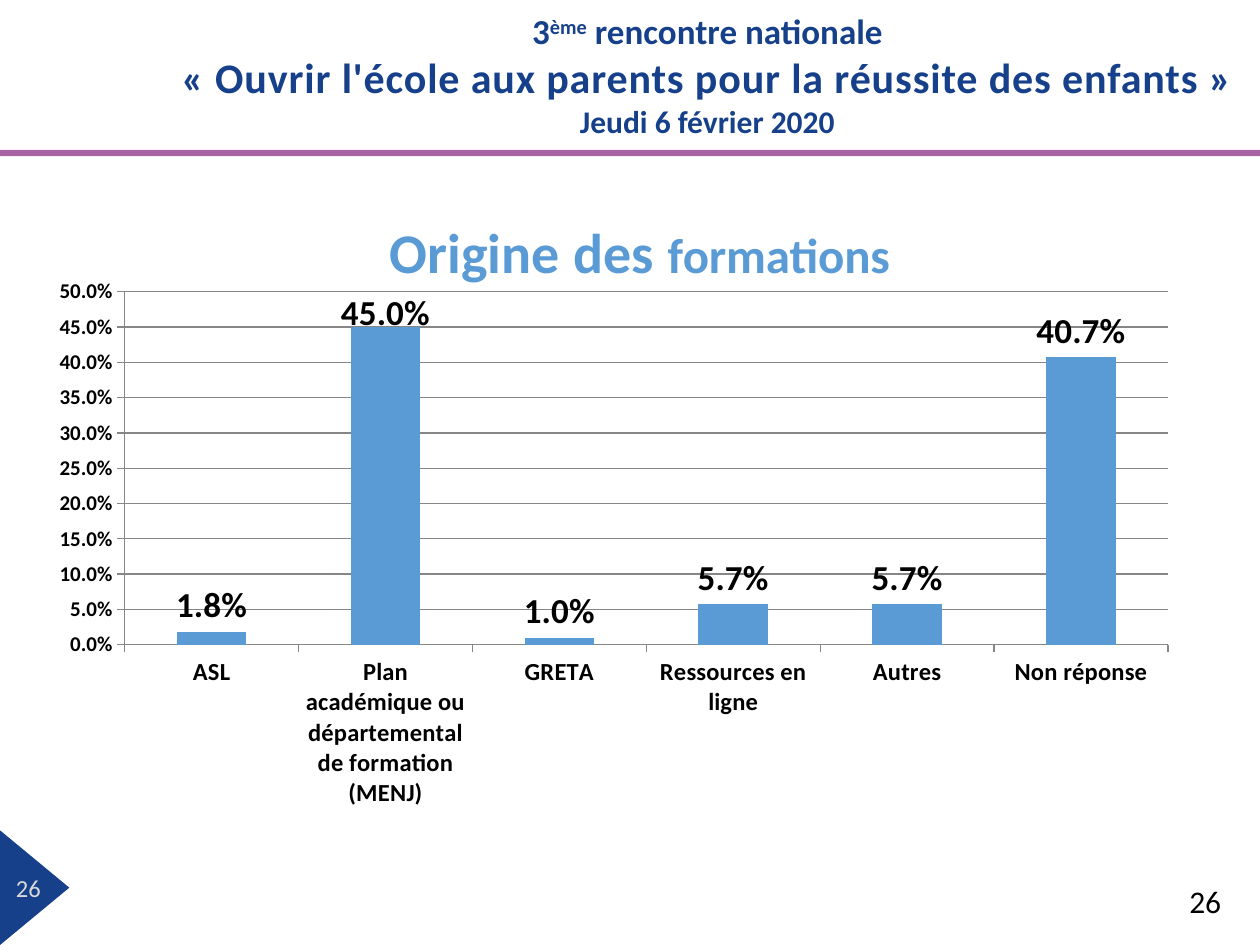
from dataclasses import dataclass

from lxml import etree
from pptx import Presentation
from pptx import util as u
from pptx.chart import data as chart_data
from pptx.dml import color
from pptx.enum import chart as charts
from pptx.enum import shapes, text
from pptx.oxml import ns


@dataclass(frozen=True)
class Theme:
    font: str = "Calibri"
    navy: str = "16408A"
    purple: str = "A863A4"
    blue: str = "5B9BD5"
    black: str = "000000"
    pale: str = "D9D9D9"
    grid: str = "868686"
    title: int = 32
    subtitle: int = 28
    headline: int = 24
    large: int = 20
    medium: int = 18
    small: int = 14
    tick: int = 12


THEME = Theme()
CELL = u.Inches(0.05)
COLUMNS, ROWS = 200, 150
ORIGINS = {
    "ASL": 0.018,
    "Plan académique ou départemental de formation (MENJ)": 0.45,
    "GRETA": 0.01,
    "Ressources en ligne": 0.057,
    "Autres": 0.057,
    "Non réponse": 0.407,
}


def grid_box(*cells):
    return [u.Emu(round(cell * CELL)) for cell in cells]


def apply_format(target, values):
    for name, value in values.items():
        setattr(target, name, value)


def style_font(font, size, hue, bold=False):
    apply_format(font, {"name": THEME.font, "size": u.Pt(size), "bold": bold})
    font.color.rgb = color.RGBColor.from_string(hue)


def paint(shape, hue):
    shape.shadow.inherit = False
    shape.fill.solid()
    shape.fill.fore_color.rgb = color.RGBColor.from_string(hue)
    shape.line.fill.background()


def add_run(paragraph, words, size, hue, bold=False, **properties):
    run = paragraph.add_run()
    run.text = words
    style_font(run.font, size, hue, bold)
    for name, value in properties.items():
        run.font._element.set(name, value)


def add_text_frame(slide, box, **values):
    frame = slide.shapes.add_textbox(*box).text_frame
    apply_format(frame, {"word_wrap": True, **values})
    return frame


def add_header(slide, box):
    frame = add_text_frame(slide, box, vertical_anchor=text.MSO_ANCHOR.MIDDLE)
    lines = [
        [("3", THEME.large, {}), ("ème", THEME.large, {"baseline": "30000"}),
         (" rencontre nationale", THEME.large, {})],
        [("« Ouvrir l'école aux parents pour la réussite des enfants »",
          THEME.headline, {"spc": "50"})],
        [("Jeudi 6 février 2020", THEME.medium, {})],
    ]
    for index, line in enumerate(lines):
        paragraph = frame.add_paragraph() if index else frame.paragraphs[0]
        paragraph.alignment = text.PP_ALIGN.CENTER
        for words, size, properties in line:
            add_run(paragraph, words, size, THEME.navy, True, **properties)


def add_rule(slide, box):
    paint(slide.shapes.add_shape(shapes.MSO_SHAPE.RECTANGLE, *box), THEME.purple)


def add_wedge(slide, box):
    left, top, width, height = box
    builder = slide.shapes.build_freeform(left, top)
    builder.add_line_segments(
        [(left, top + height), (left + width, top + height // 2)], close=True)
    paint(builder.convert_to_shape(), THEME.navy)


def add_wedge_number(slide, box):
    margins = ("margin_left", "margin_top", "margin_right", "margin_bottom")
    frame = add_text_frame(slide, box, vertical_anchor=text.MSO_ANCHOR.MIDDLE,
                           **dict.fromkeys(margins, u.Inches(0.04)))
    frame.paragraphs[0].alignment = text.PP_ALIGN.CENTER
    add_run(frame.paragraphs[0], "26", THEME.small, THEME.pale)


def add_page_number(slide, box):
    frame = add_text_frame(slide, box)
    add_run(frame.paragraphs[0], "26", THEME.medium, THEME.black)


def manual_layout(**values):
    layout = etree.Element(ns.qn("c:layout"))
    manual = etree.SubElement(layout, ns.qn("c:manualLayout"))
    for name, value in values.items():
        etree.SubElement(manual, ns.qn(f"c:{name}")).set("val", str(value))
    return layout


def add_chart_title(chart):
    chart.has_title = True
    title = chart.chart_title
    paragraph = title.text_frame.paragraphs[0]
    add_run(paragraph, "Origine des ", THEME.title, THEME.blue, True)
    add_run(paragraph, "formations", THEME.subtitle, THEME.blue, True)
    title.include_in_layout = False
    element = title._element
    for layout in element.findall(ns.qn("c:layout")):
        element.remove(layout)
    element.find(ns.qn("c:tx")).addnext(
        manual_layout(xMode="edge", yMode="edge", x=0.29, y=0.01))


def style_axes(chart):
    value_axis, category_axis = chart.value_axis, chart.category_axis
    apply_format(value_axis, {"minimum_scale": 0, "maximum_scale": 0.5,
                              "major_unit": 0.05, "has_major_gridlines": True})
    apply_format(value_axis.tick_labels,
                 {"number_format": "0.0%", "number_format_is_linked": False})
    for axis, size in ((value_axis, THEME.tick), (category_axis, THEME.small)):
        axis.major_tick_mark = charts.XL_TICK_MARK.OUTSIDE
        style_font(axis.tick_labels.font, size, THEME.black, True)
    for line in (value_axis.format.line, category_axis.format.line,
                 value_axis.major_gridlines.format.line):
        line.color.rgb = color.RGBColor.from_string(THEME.grid)
        line.width = u.Pt(0.75)


def style_columns(plot):
    apply_format(plot, {"gap_width": 150, "vary_by_categories": False})
    series = plot.series[0]
    series.format.fill.solid()
    series.format.fill.fore_color.rgb = color.RGBColor.from_string(THEME.blue)
    position = charts.XL_LABEL_POSITION.OUTSIDE_END
    labels = series.data_labels
    apply_format(labels, {"show_value": True, "number_format": "0.0%",
                          "number_format_is_linked": False, "position": position})
    style_font(labels.font, THEME.large, THEME.black, True)
    tallest = series.points[1].data_label
    style_font(tallest.font, THEME.large, THEME.black, True)
    tallest.position = position
    label = labels._element.find(ns.qn("c:dLbl"))
    layout = manual_layout(x=0, y=0.02)
    label.find(ns.qn("c:idx")).addnext(layout)
    number_format = etree.Element(ns.qn("c:numFmt"), formatCode="0.0%", sourceLinked="0")
    layout.addnext(number_format)


def add_origins_chart(slide, box):
    data = chart_data.CategoryChartData(number_format="0.0%")
    data.categories = list(ORIGINS)
    data.add_series("Series 1", list(ORIGINS.values()))
    chart = slide.shapes.add_chart(
        charts.XL_CHART_TYPE.COLUMN_CLUSTERED, *box, data).chart
    chart.has_legend = False
    style_font(chart.font, 10, THEME.black)
    add_chart_title(chart)
    style_axes(chart)
    style_columns(chart.plots[0])
    area = chart._chartSpace.chart.plotArea
    for layout in area.findall(ns.qn("c:layout")):
        area.remove(layout)
    area.insert(0, manual_layout(layoutTarget="inner", xMode="edge", yMode="edge",
                                 x=0.06, y=0.13, w=0.92, h=0.54))


def main():
    presentation = Presentation()
    apply_format(presentation, {"slide_width": COLUMNS * CELL,
                                "slide_height": ROWS * CELL})
    slide = presentation.slides.add_slide(presentation.slide_layouts[6])
    add_header(slide, grid_box(24.6, 0, 175.4, 23.8))
    add_wedge(slide, grid_box(0, 131.8, 11, 18.2))
    add_wedge_number(slide, grid_box(-1, 137.4, 11, 7))
    add_rule(slide, grid_box(0, 23.8, COLUMNS, 1))
    add_page_number(slide, grid_box(186.8, 139, 12.2, 8))
    add_origins_chart(slide, grid_box(9, 32.8, 180, 103.8))
    presentation.save("out.pptx")


if __name__ == "__main__":
    main()
